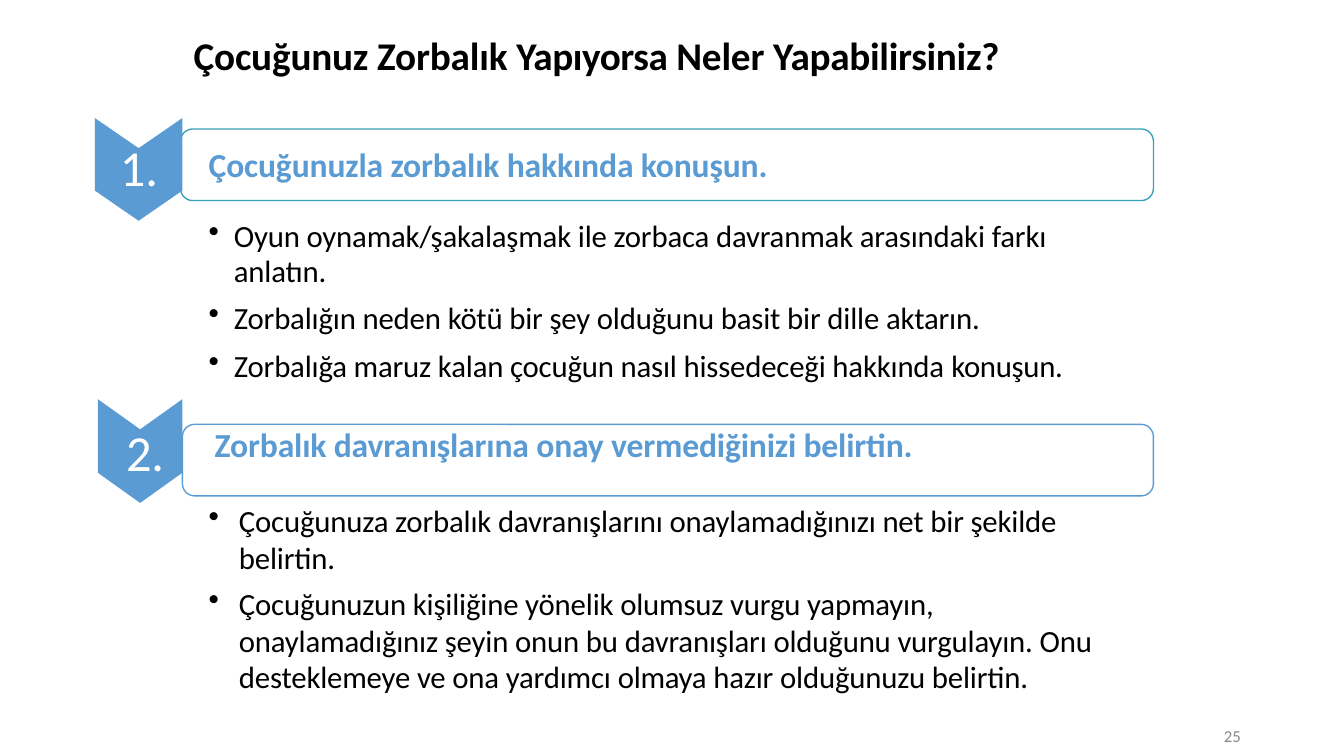
from dataclasses import dataclass

import lxml.etree
import pptx
import pptx.dml.color
import pptx.enum.shapes
import pptx.oxml.ns
import pptx.util

Inches = pptx.util.Inches
Pt = pptx.util.Pt


@dataclass(frozen=True)
class Theme:
    font: str = "Calibri"
    ink: str = "000000"
    accent: str = "5B9BD4"
    teal: str = "39A0B9"
    white: str = "FFFFFF"
    muted: str = "888888"
    title_size: int = 28
    heading_size: int = 24
    body_size: int = 22
    number_size: int = 36
    footer_size: int = 12
    outline: float = 0.96
    tracking: float = -0.1


def rgb(value):
    return pptx.dml.color.RGBColor.from_string(value)


class SlideWriter:
    def __init__(self, page, theme):
        self.page = page
        self.theme = theme

    def text_box(self, left, top, width, height):
        box = self.page.shapes.add_textbox(
            Inches(left), Inches(top), Inches(width), Inches(height))
        frame = box.text_frame
        frame.word_wrap = True
        frame.margin_left = frame.margin_right = frame.margin_bottom = 0
        frame.margin_top = Inches(0.02)
        return frame

    def add_runs(self, para, runs, size, color, bold=False):
        """Each run is its text and its letter spacing in points."""
        for text, tracking in runs:
            span = para.add_run()
            span.text = text
            span.font.name = self.theme.font
            span.font.size = Pt(size)
            span.font.bold = bold
            span.font.color.rgb = rgb(color)
            span.font._element.set("spc", str(round(tracking * 100)))

    def line(self, place, runs, size, color, bold=False):
        para = self.text_box(*place).paragraphs[0]
        para._p.get_or_add_pPr().set("marL", str(Inches(0.01)))
        self.add_runs(para, runs, size, color, bold)

    def bullets(self, place, items, indent, hanging, gap, first_pitch=None):
        """first_pitch is the fixed line pitch of the first item, in points."""
        frame = self.text_box(*place)
        for index, runs in enumerate(items):
            para = frame.add_paragraph() if index else frame.paragraphs[0]
            props = para._p.get_or_add_pPr()
            props.set("marL", str(Inches(indent)))
            props.set("indent", str(-Inches(hanging)))
            mark = lxml.etree.SubElement(props, pptx.oxml.ns.qn("a:buChar"))
            mark.set("char", "•")
            if index:
                para.space_before = Pt(gap)
            elif first_pitch:
                para.line_spacing = Pt(first_pitch)
            self.add_runs(para, runs, self.theme.body_size, self.theme.ink)

    def banner(self, frame_place, frame_color, tag_place, notch):
        """Rounded frame with a downward chevron at its left edge."""
        group = self.page.shapes.add_group_shape()
        frame = group.shapes.add_shape(
            pptx.enum.shapes.MSO_SHAPE.ROUNDED_RECTANGLE,
            *[Inches(value) for value in frame_place])
        frame.adjustments[0] = 0.17
        frame.shadow.inherit = False
        frame.fill.background()
        frame.line.color.rgb = rgb(frame_color)
        frame.line.width = Pt(self.theme.outline)

        left, top, width, height = tag_place
        middle, right, bottom = left + width / 2, left + width, top + height
        outline = [(middle, top + notch), (left, top), (left, bottom - notch),
                   (middle, bottom), (right, bottom - notch)]
        builder = group.shapes.build_freeform(Inches(right), Inches(top))
        builder.add_line_segments(
            [(Inches(x), Inches(y)) for x, y in outline], close=True)
        chevron = builder.convert_to_shape()
        chevron.shadow.inherit = False
        chevron.fill.solid()
        chevron.fill.fore_color.rgb = rgb(self.theme.accent)
        chevron.line.fill.background()


def main():
    theme = Theme()
    normal, tight, tighter = theme.tracking, -0.2, -0.3
    deck = pptx.Presentation()
    deck.slide_width, deck.slide_height = Inches(13.33), Inches(7.5)
    page = deck.slides.add_slide(deck.slide_layouts[6])
    writer = SlideWriter(page, theme)

    writer.line((1.91, 0.29, 8.15, 0.49),
                [("Çocuğunuz Zorbalık ", normal), ("Yapıyorsa ", tighter),
                 ("Neler ", normal), ("Yapabilirsiniz?", tight)],
                theme.title_size, theme.ink, bold=True)

    sections = [
        ("1.", (1.18, 1.33, 0.41, 0.63),
         "Çocuğunuzla zorbalık hakkında konuşun.", (2.06, 1.41, 5.62, 0.43),
         (1.79, 1.28, 9.65, 0.71), theme.teal, (0.94, 1.17, 0.87, 1.02)),
        ("2.", (1.24, 4.16, 0.41, 0.63),
         "Zorbalık davranışlarına onay vermediğinizi belirtin.",
         (2.12, 4.19, 7.03, 0.43),
         (1.81, 4.21, 9.63, 0.71), theme.accent, (0.97, 3.96, 0.84, 1.03)),
    ]
    for (number, number_place, heading, heading_place,
         frame_place, frame_color, tag_place) in sections:
        writer.banner(frame_place, frame_color, tag_place, notch=0.3)
        writer.line(number_place, [(number, normal)],
                    theme.number_size, theme.white)
        writer.line(heading_place, [(heading, normal)],
                    theme.heading_size, theme.accent, bold=True)

    writer.bullets(
        (2.06, 2.15, 8.6, 1.66),
        [[("Oyun oynamak/şakalaşmak ile zorbaca davranmak arasındaki farkı "
           "anlatın.", normal)],
         [("Zorbalığın neden ", normal), ("kötü ", tight),
          ("bir şey olduğunu basit bir dille aktarın.", normal)],
         [("Zorbalığa maruz kalan çocuğun nasıl hissedeceği hakkında ", normal),
          ("konuşun.", tight)]],
        indent=0.26, hanging=0.25, gap=7.3, first_pitch=25.1)
    writer.bullets(
        (2.06, 4.96, 8.89, 1.95),
        [[("Çocuğunuza zorbalık davranışlarını onaylamadığınızı net bir şekilde "
           "belirtin.", normal)],
         [("Çocuğunuzun kişiliğine yönelik olumsuz vurgu yapmayın, "
           "onaylamadığınız şeyin onun bu davranışları olduğunu vurgulayın. Onu "
           "desteklemeye ve ona yardımcı ", normal), ("olmaya ", tight),
          ("hazır olduğunuzu belirtin.", normal)]],
        indent=0.31, hanging=0.3, gap=6)

    writer.line((12.13, 7.18, 0.2, 0.23), [("25", 0)],
                theme.footer_size, theme.muted)
    deck.save("out.pptx")


if __name__ == "__main__":
    main()
